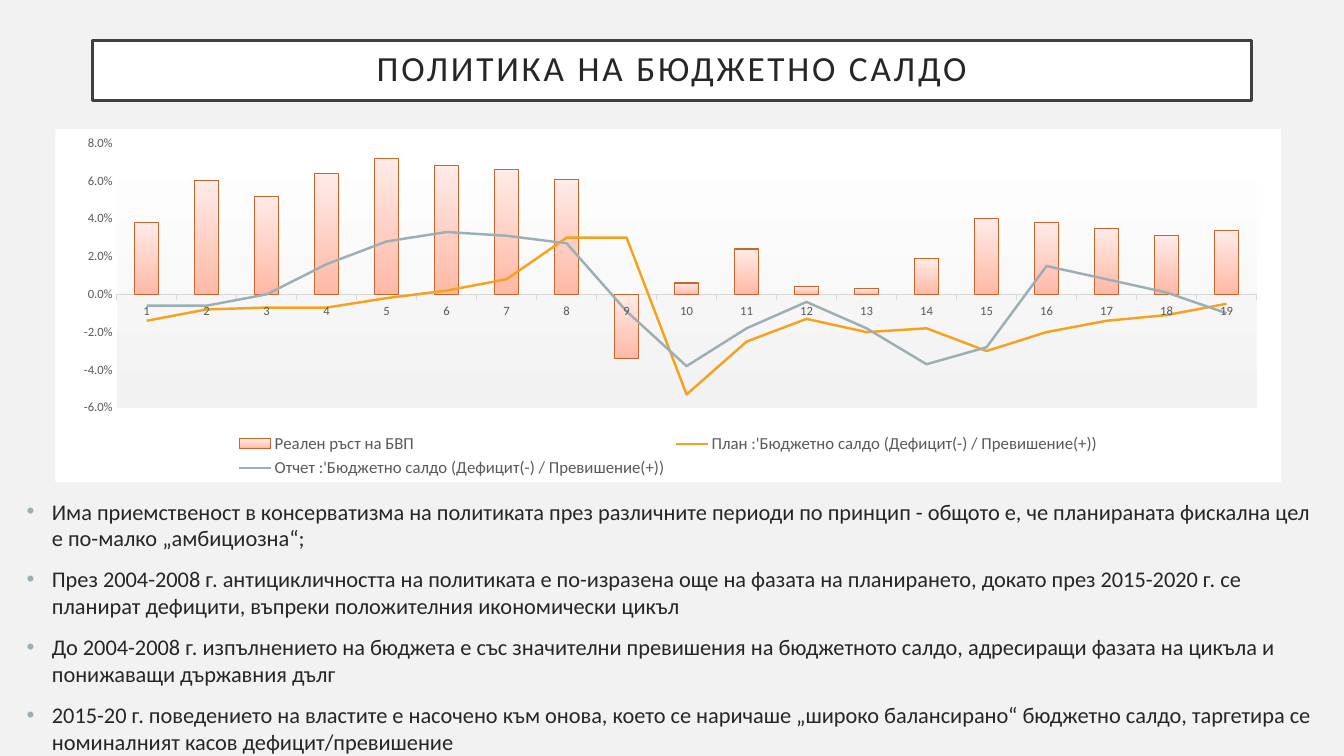
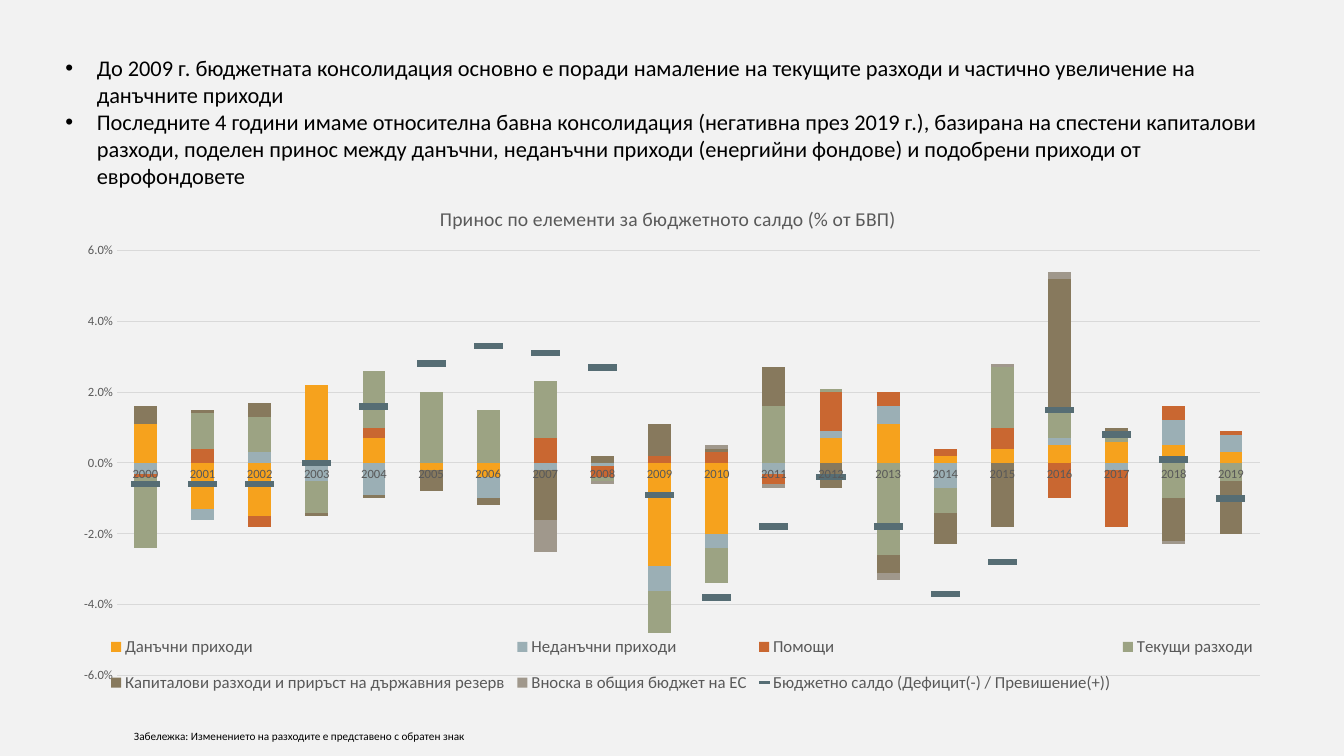
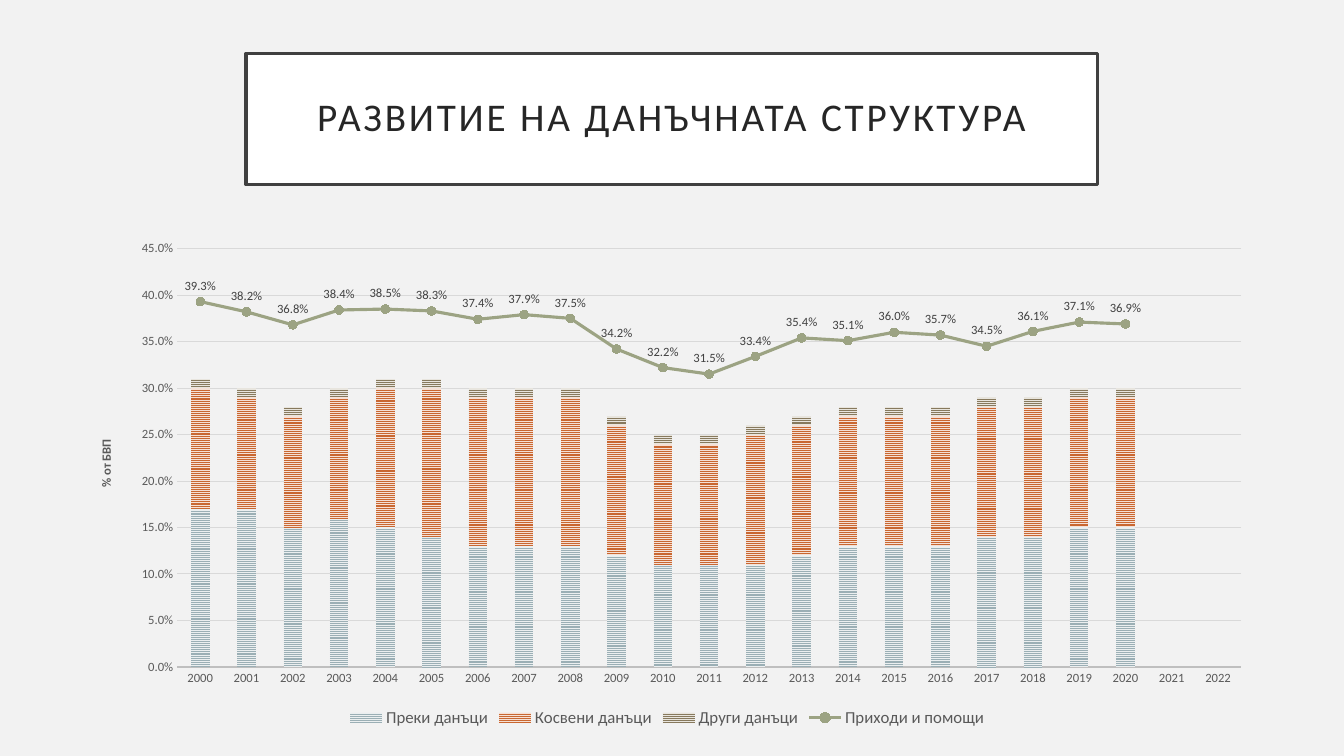
from pptx import Presentation
from pptx.chart.data import CategoryChartData
from pptx.dml.color import RGBColor
from pptx.enum.chart import (XL_CHART_TYPE, XL_LABEL_POSITION, XL_LEGEND_POSITION,
                             XL_MARKER_STYLE, XL_TICK_MARK)
from pptx.enum.dml import MSO_PATTERN
from pptx.enum.shapes import MSO_SHAPE
from pptx.enum.text import MSO_ANCHOR, PP_ALIGN
from pptx.oxml import parse_xml
from pptx.oxml.ns import nsdecls, qn
from pptx.util import Pt

CLUSTERED, STACKED = XL_CHART_TYPE.COLUMN_CLUSTERED, XL_CHART_TYPE.COLUMN_STACKED
TICK_NONE, TICK_OUT = XL_TICK_MARK.NONE, XL_TICK_MARK.OUTSIDE
NO_MARKER, DASH, CIRCLE = XL_MARKER_STYLE.NONE, XL_MARKER_STYLE.DASH, XL_MARKER_STYLE.CIRCLE
BOTTOM, ABOVE = XL_LEGEND_POSITION.BOTTOM, XL_LABEL_POSITION.ABOVE
STRIPES = MSO_PATTERN.NARROW_HORIZONTAL
RECT, MIDDLE, CENTER = MSO_SHAPE.RECTANGLE, MSO_ANCHOR.MIDDLE, PP_ALIGN.CENTER
rgb = RGBColor.from_string


class Theme:
    font = "Calibri"
    background, white, black = rgb("F2F2F2"), rgb("FFFFFF"), rgb("000000")
    text, frame, muted = rgb("262626"), rgb("404040"), rgb("595959")
    grid, axis = rgb("D9D9D9"), rgb("BFBFBF")
    orange, blue, rust = rgb("F6A21D"), rgb("9BAFB5"), rgb("C96731")
    green, brown, taupe, slate = rgb("9CA383"), rgb("87795D"), rgb("A0988C"), rgb("566D74")
    blue_tint, rust_tint, brown_tint = rgb("EBEFF0"), rgb("F5E0D5"), rgb("E8E5DE")
    bar_dark, bar_light, bar_line = rgb("FFB8A6"), rgb("FFEBE7"), rgb("C56530")
    body_size, legend_size, chart_title_size = 16, 12, 14
    chart_size, axis_size, note_size = 10, 9, 8


def xml(text):
    """Parse a chart or drawing fragment, declaring its namespaces on the root."""
    return parse_xml(text.replace(">", f" {nsdecls('c', 'a')}>", 1))


def add_combo_chart(slide, box, kind, cats, series, bar_count, scale, plot_layout):
    """Add columns with the series after bar_count drawn as lines on the same axes."""
    data = CategoryChartData(number_format="0.0%")
    data.categories = cats
    for name, values in series:
        values = [round(v / 100, 4) for v in values]
        data.add_series(name, values + [None] * (len(cats) - len(values)))
    chart = slide.shapes.add_chart(kind, *map(Pt, box), data).chart
    chart.has_title = False
    chart.font.name, chart.font.size = Theme.font, Pt(Theme.chart_size)
    chart.font.color.rgb = Theme.black

    # Columns and lines
    bars = chart.plots[0]
    bars.gap_width, bars.overlap = 150, 100 if kind == STACKED else 0
    bars.vary_by_categories = False
    bar_xml = chart.element.find(".//" + qn("c:barChart"))
    line_xml = xml('<c:lineChart><c:grouping val="standard"/><c:varyColors val="0"/>'
                   '<c:marker val="1"/></c:lineChart>')
    for ser in bar_xml.findall(qn("c:ser"))[bar_count:]:
        for flag in ser.findall(qn("c:invertIfNegative")):
            ser.remove(flag)
        line_xml.find(qn("c:marker")).addprevious(ser)
    for ax in bar_xml.findall(qn("c:axId")):
        line_xml.append(xml(f'<c:axId val="{ax.get("val")}"></c:axId>'))
    bar_xml.addnext(line_xml)
    for line in chart.plots[1].series:
        line.smooth = False

    # Axes
    value_axis, cat_axis = chart.value_axis, chart.category_axis
    value_axis.minimum_scale, value_axis.maximum_scale, value_axis.major_unit = scale
    for axis in (value_axis, cat_axis):
        axis.major_tick_mark = axis.minor_tick_mark = TICK_NONE
        font = axis.tick_labels.font
        font.name, font.size, font.color.rgb = Theme.font, Pt(Theme.axis_size), Theme.muted
    value_axis.tick_labels.number_format = "0.0%"
    value_axis.tick_labels.number_format_is_linked = False
    value_axis.format.line.fill.background()
    value_axis.major_gridlines.format.line.color.rgb = Theme.grid
    value_axis.major_gridlines.format.line.width = Pt(0.75)
    cat_axis.format.line.color.rgb, cat_axis.format.line.width = Theme.grid, Pt(0.75)

    # Legend
    chart.has_legend = True
    legend = chart.legend
    legend.position, legend.include_in_layout = BOTTOM, False
    font = legend.font
    font.name, font.size, font.color.rgb = Theme.font, Pt(Theme.legend_size), Theme.muted

    # Plot position and transparent chart background
    plot_area = chart.element.find(".//" + qn("c:plotArea"))
    for old in plot_area.findall(qn("c:layout")):
        plot_area.remove(old)
    x, y, w, h = plot_layout
    plot_area.insert(0, xml(
        '<c:layout><c:manualLayout><c:layoutTarget val="inner"/>'
        '<c:xMode val="edge"/><c:yMode val="edge"/>'
        f'<c:x val="{x}"/><c:y val="{y}"/><c:w val="{w}"/><c:h val="{h}"/>'
        '</c:manualLayout></c:layout>'))
    chart.element.find(qn("c:chart")).addnext(
        xml("<c:spPr><a:noFill/><a:ln><a:noFill/></a:ln></c:spPr>"))
    return chart


prs = Presentation()
prs.slide_width, prs.slide_height = Pt(960), Pt(540)
fill = prs.slide_master.background.fill
fill.solid()
fill.fore_color.rgb = Theme.background
policy, contributions, taxes = [prs.slides.add_slide(prs.slide_layouts[6]) for _ in range(3)]

# Framed titles
for s, box, size, title in [
    (policy, (66, 28.8, 828, 43.2), 25.2, "ПОЛИТИКА НА БЮДЖЕТНО САЛДО"),
    (taxes, (175.7, 38.2, 608.4, 93.6), 28, "РАЗВИТИЕ НА ДАНЪЧНАТА СТРУКТУРА"),
]:
    sp = s.shapes.add_shape(RECT, *map(Pt, box))
    sp.shadow.inherit = False
    sp.fill.solid()
    sp.fill.fore_color.rgb = Theme.white
    sp.line.color.rgb, sp.line.width = Theme.frame, Pt(2.5)
    tf = sp.text_frame
    tf.text, tf.word_wrap, tf.vertical_anchor = title, True, MIDDLE
    tf.margin_left = tf.margin_right = tf.margin_top = tf.margin_bottom = Pt(14.4)
    p = tf.paragraphs[0]
    p.alignment, p.line_spacing = CENTER, 0.9
    r = p.runs[0]
    r.font.name, r.font.size, r.font.color.rgb = Theme.font, Pt(size), Theme.text
    r.font._element.set("spc", "200")

# Bulleted texts
for s, box, color, bullet_color, indent, space, lines in [
    (policy, (12, 352, 932.4, 180), Theme.text, Theme.blue, 18, 10, [
        "Има приемственост в консерватизма на политиката през различните периоди по принцип - "
        "общото е, че планираната фискална цел е по-малко „амбициозна“;",
        "През 2004-2008 г. антицикличността на политиката е по-изразена още на фазата на "
        "планирането, докато през 2015-2020 г. се планират дефицити, въпреки положителния "
        "икономически цикъл",
        "До 2004-2008 г. изпълнението на бюджета е със значителни превишения на бюджетното "
        "салдо, адресиращи фазата на цикъла и понижаващи държавния дълг",
        "2015-20 г. поведението на властите е насочено към онова, което се наричаше „широко "
        "балансирано“ бюджетно салдо, таргетира се номиналният касов дефицит/превишение",
    ]),
    (contributions, (39.6, 35.3, 877.7, 104.4), Theme.black, Theme.black, 22.5, 0, [
        "До 2009 г. бюджетната консолидация основно е поради намаление на текущите разходи и "
        "частично увеличение на данъчните приходи",
        "Последните 4 години имаме относителна бавна консолидация (негативна през 2019 г.), "
        "базирана на спестени капиталови разходи, поделен принос между данъчни, неданъчни "
        "приходи (енергийни фондове) и подобрени приходи от еврофондовете",
    ]),
]:
    tf = s.shapes.add_textbox(*map(Pt, box)).text_frame
    tf.text, tf.word_wrap = "\n".join(lines), True
    for p in tf.paragraphs:
        p.space_before = Pt(space)
        font = p.runs[0].font
        font.name, font.size, font.color.rgb = Theme.font, Pt(Theme.body_size), color
        pPr = p._p.get_or_add_pPr()
        pPr.set("marL", str(Pt(indent)))
        pPr.set("indent", str(-Pt(indent)))
        pPr.append(xml(f'<a:buClr><a:srgbClr val="{bullet_color}"/></a:buClr>'))
        pPr.append(xml('<a:buFont typeface="Arial"></a:buFont>'))
        pPr.append(xml('<a:buChar char="•"></a:buChar>'))

# Slide 1: growth and budget balance
balance_name = "Бюджетно салдо (Дефицит(-) / Превишение(+))"
balance = [-0.6, -0.6, 0, 1.6, 2.8, 3.3, 3.1, 2.7, -0.9, -3.8,
           -1.8, -0.4, -1.8, -3.7, -2.8, 1.5, 0.8, 0.1, -1]
chart = add_combo_chart(
    policy, (39.6, 92.2, 875.5, 252), CLUSTERED, [str(n) for n in range(1, 20)], [
        ("Реален ръст на БВП", [3.8, 6, 5.2, 6.4, 7.2, 6.8, 6.6, 6.1, -3.4, 0.6,
                                2.4, 0.4, 0.3, 1.9, 4, 3.8, 3.5, 3.1, 3.4]),
        ("План :'" + balance_name, [-1.4, -0.8, -0.7, -0.7, -0.2, 0.2, 0.8, 3, 3, -5.3,
                                    -2.5, -1.3, -2, -1.8, -3, -2, -1.4, -1.1, -0.5]),
        ("Отчет :'" + balance_name, balance),
    ], 1, (-0.06, 0.08, 0.02), (0.05, 0.04, 0.93, 0.75))
chart.value_axis.has_major_gridlines = False
chart.category_axis.major_tick_mark = TICK_OUT
growth = chart.plots[0].series[0].format
growth.fill.gradient()
growth.fill.gradient_angle = 90
for stop, color in zip(growth.fill.gradient_stops, (Theme.bar_dark, Theme.bar_light)):
    stop.color.rgb = color
growth.line.color.rgb, growth.line.width = Theme.bar_line, Pt(0.75)
for line, color in zip(chart.plots[1].series, (Theme.orange, Theme.blue)):
    line.format.line.color.rgb, line.format.line.width = color, Pt(1.75)
    line.marker.style = NO_MARKER
chart_fill = chart.element.find(qn("c:spPr"))
chart_fill.replace(chart_fill[0], xml(
    f'<a:solidFill><a:srgbClr val="{Theme.white}"/></a:solidFill>'))
chart.element.find(".//" + qn("c:plotArea")).append(xml(
    '<c:spPr><a:gradFill><a:gsLst>'
    f'<a:gs pos="0"><a:srgbClr val="{Theme.white}"/></a:gs>'
    f'<a:gs pos="100000"><a:srgbClr val="{Theme.background}"/></a:gs>'
    '</a:gsLst><a:lin ang="5400000" scaled="0"/></a:gradFill></c:spPr>'))

# Slide 2: contributions to the balance
chart = add_combo_chart(
    contributions, (39.6, 128.2, 877.7, 389.5), STACKED, [str(y) for y in range(2000, 2020)], [
        ("Данъчни приходи", [1.1, -1.3, -1.5, 2.2, 0.7, -0.2, -0.4, 0, 0, -2.9,
                             -2, 0, 0.7, 1.1, 0.2, 0.4, 0.5, 0.6, 0.5, 0.3]),
        ("Неданъчни приходи", [-0.3, -0.3, 0.3, -0.5, -0.9, 0, -0.6, -0.2, -0.1, -0.7,
                               -0.4, -0.3, 0.2, 0.5, -0.7, 0, 0.2, -0.2, 0.7, 0.5]),
        ("Помощи", [-0.1, 0.4, -0.3, 0, 0.3, 0, 0, 0.7, -0.3, 0.2,
                    0.3, -0.3, 1.1, 0.4, 0.2, 0.6, -1, -1.6, 0.4, 0.1]),
        ("Текущи разходи", [-2, 1, 1, -0.9, 1.6, 2, 1.5, 1.6, -0.1, -1.2,
                            -1, 1.6, 0.1, -2.6, -0.7, 1.7, 0.8, 0.1, -1, -0.5]),
        ("Капиталови разходи и приръст на държавния резерв",
         [0.5, 0.1, 0.4, -0.1, -0.1, -0.6, -0.2, -1.4, 0.2, 0.9,
          0.1, 1.1, -0.7, -0.5, -0.9, -1.8, 3.7, 0.3, -1.2, -1.5]),
        ("Вноска в общия бюджет на ЕС", [0, 0, 0, 0, 0, 0, 0, -0.9, -0.1, 0,
                                         0.1, -0.1, 0, -0.2, 0, 0.1, 0.2, 0, -0.1, 0]),
        (balance_name, [-0.6] + balance),
    ], 6, (-0.06, 0.06, 0.02), (0.05, 0.13, 0.93, 0.78))
for bar, color in zip(chart.plots[0].series, (Theme.orange, Theme.blue, Theme.rust,
                                              Theme.green, Theme.brown, Theme.taupe)):
    bar.format.fill.solid()
    bar.format.fill.fore_color.rgb = color
line = chart.plots[1].series[0]
line.format.line.fill.background()
line.marker.style, line.marker.size = DASH, 20
line.marker.format.fill.solid()
line.marker.format.fill.fore_color.rgb = Theme.slate
line.marker.format.line.fill.background()
chart.has_title = True
tf = chart.chart_title.text_frame
tf.text = "Принос по елементи за бюджетното салдо (% от БВП)"
font = tf.paragraphs[0].runs[0].font
font.name, font.size, font.bold = Theme.font, Pt(Theme.chart_title_size), False
font.color.rgb = Theme.muted
for part, place in [("c:title", {"x": 0.31, "y": 0.04}),
                    ("c:legend", {"x": 0.04, "y": 0.81, "w": 0.94, "h": 0.16})]:
    element = chart.element.find(qn("c:chart")).find(qn(part))
    for old in element.findall(qn("c:layout")):
        element.remove(old)
    values = "".join(f'<c:{key} val="{v}"/>' for key, v in place.items())
    element.insert(1, xml('<c:layout><c:manualLayout><c:xMode val="edge"/><c:yMode val="edge"/>'
                          f'{values}</c:manualLayout></c:layout>'))

# Slide 2: note
tf = contributions.shapes.add_textbox(Pt(88.6), Pt(517.7), Pt(254), Pt(17.3)).text_frame
tf.text, tf.word_wrap = "Забележка: Изменението на разходите е представено с обратен знак", False
font = tf.paragraphs[0].runs[0].font
font.name, font.size, font.color.rgb = Theme.font, Pt(Theme.note_size), Theme.black

# Slide 3: tax structure
chart = add_combo_chart(
    taxes, (49.7, 167, 854, 355.7), STACKED, [str(y) for y in range(2000, 2023)], [
        ("Преки данъци", [17, 17, 15, 16, 15, 14, 13, 13, 13, 12, 11,
                          11, 11, 12, 13, 13, 13, 14, 14, 15, 15]),
        ("Косвени данъци", [13, 12, 12, 13, 15, 16, 16, 16, 16, 14, 13,
                            13, 14, 14, 14, 14, 14, 14, 14, 14, 14]),
        ("Други данъци", [1] * 21),
        ("Приходи и помощи", [39.3, 38.2, 36.8, 38.4, 38.5, 38.3, 37.4, 37.9, 37.5, 34.2, 32.2,
                              31.5, 33.4, 35.4, 35.1, 36, 35.7, 34.5, 36.1, 37.1, 36.9]),
    ], 3, (0, 0.45, 0.05), (0.09, 0.03, 0.89, 0.84))
for bar, fore, back in zip(chart.plots[0].series,
                           (Theme.blue, Theme.rust, Theme.brown),
                           (Theme.blue_tint, Theme.rust_tint, Theme.brown_tint)):
    fill = bar.format.fill
    fill.patterned()
    fill.pattern = STRIPES
    fill.fore_color.rgb, fill.back_color.rgb = fore, back
line = chart.plots[1].series[0]
line.format.line.color.rgb, line.format.line.width = Theme.green, Pt(2.25)
line.marker.style, line.marker.size = CIRCLE, 6
line.marker.format.fill.solid()
line.marker.format.fill.fore_color.rgb = Theme.green
line.marker.format.line.color.rgb = Theme.green
labels = line.data_labels
labels.show_value, labels.position = True, ABOVE
labels.number_format, labels.number_format_is_linked = "0.0%", False
font = labels.font
font.name, font.size, font.color.rgb = Theme.font, Pt(Theme.axis_size), Theme.frame
chart.category_axis.format.line.color.rgb = Theme.axis
chart.category_axis.format.line.width = Pt(1.5)
tf = chart.value_axis.axis_title.text_frame
tf.text = "% от БВП"
font = tf.paragraphs[0].runs[0].font
font.name, font.size, font.bold = Theme.font, Pt(Theme.axis_size), True
font.color.rgb = Theme.muted

prs.save("out.pptx")
